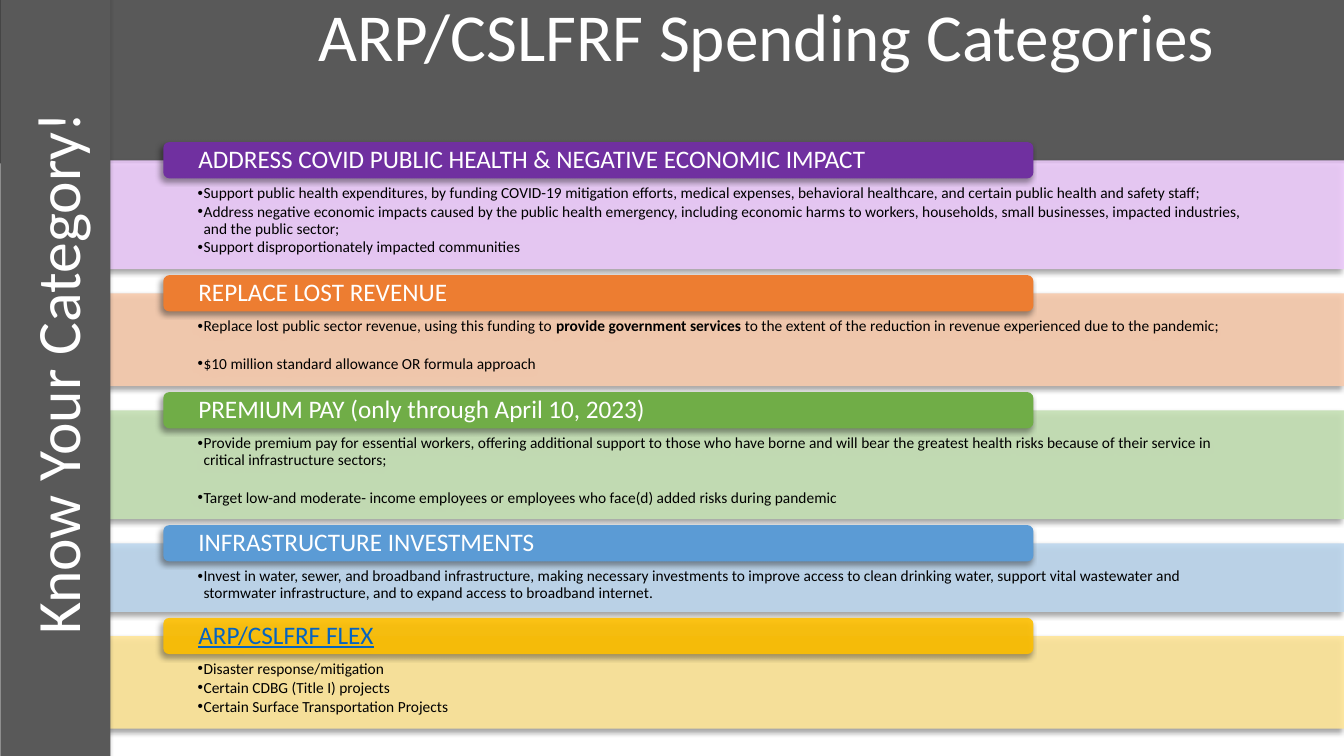
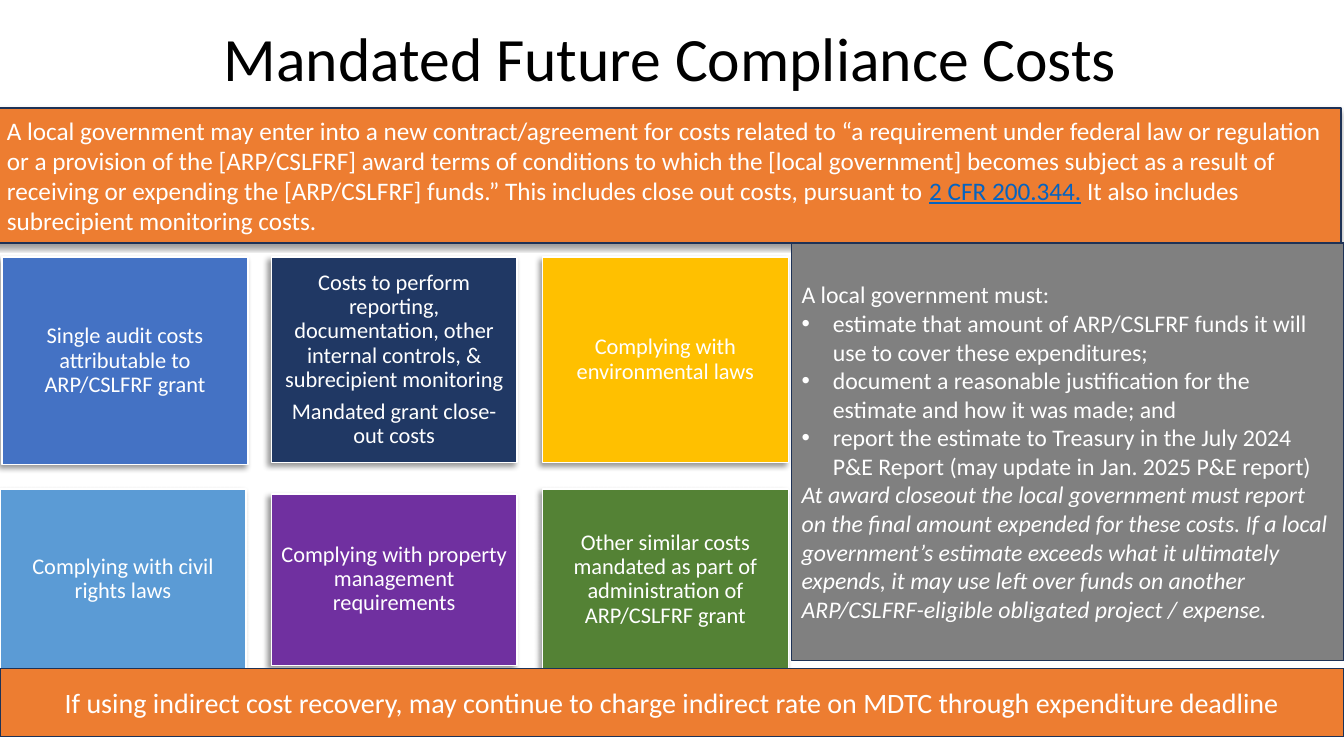
"""Builds two slides on spending categories and compliance costs."""
from dataclasses import dataclass

from lxml import etree
from pptx import Presentation
from pptx import util as u
from pptx.dml.color import RGBColor
from pptx.enum import shapes, text
from pptx.oxml.ns import qn

EMU_PER_PX = 9144
LEFT, CENTER = text.PP_ALIGN.LEFT, text.PP_ALIGN.CENTER
TOP, MIDDLE = text.MSO_ANCHOR.TOP, text.MSO_ANCHOR.MIDDLE


@dataclass(frozen=True)
class Theme:
    font: str = "Calibri"
    white: str = "FFFFFF"
    black: str = "000000"
    dark_gray: str = "595959"
    gray: str = "808080"
    navy: str = "203864"
    outline: str = "1E3256"
    link: str = "0563C1"
    purple: str = "7030A0"
    orange: str = "ED7D31"
    green: str = "70AD47"
    dark_green: str = "548235"
    light_blue: str = "5B9BD5"
    blue: str = "4472C4"
    gold: str = "FFC000"
    pale_purple: str = "ECCAFA"
    pale_orange: str = "F8CBAD"
    pale_green: str = "C5E0B4"
    pale_blue: str = "BDD7EE"
    pale_gold: str = "FFE699"
    display: float = 48
    title: float = 44
    footer: float = 20
    heading: float = 18
    panel: float = 17
    tile: float = 16
    detail: float = 11


THEME = Theme()


def px(length):
    return u.Emu(length * EMU_PER_PX)


class Deck:
    """Holds the theme and the current slide, and draws each kind of element."""

    def __init__(self, theme):
        self.theme = theme
        self.presentation = Presentation()
        self.presentation.slide_width = px(1333)
        self.presentation.slide_height = px(750)
        self.slide = None

    def add_slide(self, layout):
        self.slide = self.presentation.slides.add_slide(
            self.presentation.slide_layouts[layout])

    def placeholder(self, index, box):
        shape = self.slide.placeholders[index]
        shape.left, shape.top, shape.width, shape.height = map(px, box)
        shape.element.getparent().append(shape.element)
        return shape

    def title(self, words, box, size, color):
        self.put_text(self.placeholder(0, box), [words], size, color, CENTER, spacing=0.9)

    def style(self, shape, fill, line=None, alpha=None, shadow=False):
        shape.fill.solid()
        shape.fill.fore_color.rgb = RGBColor.from_string(fill)
        properties = shape.element.spPr
        if alpha:
            color = properties.find(".//" + qn("a:srgbClr"))
            etree.SubElement(color, qn("a:alpha"), val=str(alpha * 1000))
        if line:
            shape.line.color.rgb = RGBColor.from_string(line)
            shape.line.width = u.Pt(1)
        else:
            shape.line.fill.background()
        shape.shadow.inherit = False
        if shadow:
            outer = etree.SubElement(
                properties.find(qn("a:effectLst")), qn("a:outerShdw"),
                blurRad=str(u.Pt(4)), dist=str(u.Pt(3)), dir="8100000", rotWithShape="0")
            color = etree.SubElement(outer, qn("a:srgbClr"), val=self.theme.black)
            etree.SubElement(color, qn("a:alpha"), val="40000")

    def box(self, box, fill, rounded=False, **style):
        kind = shapes.MSO_SHAPE.ROUNDED_RECTANGLE if rounded else shapes.MSO_SHAPE.RECTANGLE
        shape = self.slide.shapes.add_shape(kind, *map(px, box))
        self.style(shape, fill, **style)
        return shape

    def put_text(self, shape, paragraphs, size, color, align=LEFT, anchor=MIDDLE,
                 insets=(10, 5, 10, 5), spacing=1, after=0, gap=0, bullet_indent=0,
                 bulleted=()):
        frame = shape.text_frame
        frame.word_wrap = True
        frame.auto_size = text.MSO_AUTO_SIZE.NONE
        frame.vertical_anchor = anchor
        (frame.margin_left, frame.margin_top,
         frame.margin_right, frame.margin_bottom) = map(px, insets)
        for number, content in enumerate(paragraphs):
            paragraph = frame.add_paragraph() if number else frame.paragraphs[0]
            paragraph.alignment = align
            paragraph.line_spacing = spacing
            paragraph.space_before = u.Pt(gap if number else 0)
            paragraph.space_after = u.Pt(after)
            self.bullet(paragraph, bullet_indent if number in bulleted else 0)
            paragraph.font.name = self.theme.font
            paragraph.font.size = u.Pt(size)
            paragraph.font.color.rgb = RGBColor.from_string(color)
            for part in [content] if isinstance(content, str) else content:
                self.run(paragraph, *([part] if isinstance(part, str) else part))

    def bullet(self, paragraph, indent):
        properties = paragraph._p.get_or_add_pPr()
        properties.set("marL", str(px(indent)))
        properties.set("indent", str(px(-indent)))
        if indent:
            etree.SubElement(properties, qn("a:buFont"), typeface="Arial")
            etree.SubElement(properties, qn("a:buChar"), char="•")
        else:
            etree.SubElement(properties, qn("a:buNone"))

    def run(self, paragraph, words, emphasis=None):
        run = paragraph.add_run()
        run.text = words
        if emphasis == "bold":
            run.font.bold = True
        elif emphasis == "italic":
            run.font.italic = True
        elif emphasis == "link":
            run.font.underline = True
            run.font.color.rgb = RGBColor.from_string(self.theme.link)

    def category(self, top, height, heading, details, color, pale, gap=0, alpha=None):
        theme = self.theme
        band = self.box((100, top, 1233, height), pale, alpha=90, shadow=True)
        self.put_text(band, details, theme.detail, theme.black, anchor=TOP,
                      insets=(96, 25, 96, 9), spacing=0.9, after=1.5, gap=gap,
                      bullet_indent=6, bulleted=range(len(details)))
        chip = self.box((162, top - 18, 863, 36), color, rounded=True,
                        alpha=alpha, shadow=True)
        self.put_text(chip, [heading], theme.heading, theme.white,
                      insets=(33, 0, 33, 0), spacing=0.9)

    def tile(self, box, color, paragraphs):
        shape = self.box(box, color, line=self.theme.white, shadow=True)
        self.put_text(shape, paragraphs, self.theme.tile, self.theme.white, CENTER,
                      insets=(7, 7, 7, 7), spacing=0.9, after=5.6)

    def side_title(self, words, box):
        shape = self.box(box, self.theme.dark_gray, shadow=True)
        shape.rotation = 270
        self.put_text(shape, [words], self.theme.title, self.theme.white, CENTER)

    def banner(self, box, content, size, align=LEFT, shadow=False):
        shape = self.box(box, self.theme.orange, line=self.theme.outline, shadow=shadow)
        self.put_text(shape, [content], size, self.theme.white, align)

    def list_panel(self, box, paragraphs, bulleted):
        shape = self.placeholder(1, box)
        self.style(shape, self.theme.gray, line=self.theme.outline)
        self.put_text(shape, paragraphs, self.theme.panel, self.theme.white,
                      bullet_indent=31, bulleted=bulleted)


CATEGORIES = [
    (108, "ADDRESS COVID PUBLIC HEALTH & NEGATIVE ECONOMIC IMPACT", [
        "Support public health expenditures, by funding COVID-19 mitigation efforts, medical "
        "expenses, behavioral healthcare, and certain public health and safety staff;",
        "Address negative economic impacts caused by the public health emergency, including "
        "economic harms to workers, households, small businesses, impacted industries, and "
        "the public sector;",
        "Support disproportionately impacted communities",
    ], THEME.purple, THEME.pale_purple),
    (92, "REPLACE LOST REVENUE", [
        ["Replace lost public sector revenue, using this funding to ",
         ("provide government services ", "bold"),
         "to the extent of the reduction in revenue experienced due to the pandemic;"],
        "$10 million standard allowance OR formula approach",
    ], THEME.orange, THEME.pale_orange, 13.5),
    (108, "PREMIUM PAY (only through April 10, 2023)", [
        "Provide premium pay for essential workers, offering additional support to those who "
        "have borne and will bear the greatest health risks because of their service in "
        "critical infrastructure sectors;",
        "Target low-and moderate- income employees or employees who face(d) added risks "
        "during pandemic",
    ], THEME.green, THEME.pale_green, 13.5),
    (68, "INFRASTRUCTURE INVESTMENTS", [
        "Invest in water, sewer, and broadband infrastructure, making necessary investments "
        "to improve access to clean drinking water, support vital wastewater and stormwater "
        "infrastructure, and to expand access to broadband internet.",
    ], THEME.light_blue, THEME.pale_blue),
    (92, [("ARP/CSLFRF FLEX", "link")], [
        "Disaster response/mitigation",
        "Certain CDBG (Title I) projects",
        "Certain Surface Transportation Projects",
    ], THEME.gold, THEME.pale_gold, 0, 90),
]

TILES = [
    ((2, 255, 244, 206), THEME.blue, ["Single audit costs attributable to ARP/CSLFRF grant"]),
    ((269, 255, 244, 204), THEME.navy, [
        "Costs to perform reporting, documentation, other internal controls, & "
        "subrecipient monitoring",
        "Mandated grant close-out costs"]),
    ((538, 255, 244, 204), THEME.gold, ["Complying with environmental laws"]),
    ((0, 485, 244, 180), THEME.light_blue, ["Complying with civil rights laws"]),
    ((269, 490, 244, 170), THEME.purple, ["Complying with property management requirements"]),
    ((538, 485, 244, 180), THEME.dark_green, [
        "Other similar costs mandated as part of administration of ARP/CSLFRF grant"]),
]

CONTRACT_RULE = [
    "A local government may enter into a new contract/agreement for costs related to “a "
    "requirement under federal law or regulation or a provision of the [ARP/CSLFRF] award "
    "terms of conditions to which the [local government] becomes subject as a result of "
    "receiving or expending the [ARP/CSLFRF] funds.” This includes close out costs, "
    "pursuant to ",
    ("2 CFR 200.344.", "link"),
    " It also includes subrecipient monitoring costs.",
]

DUTIES = [
    "A local government must:",
    "estimate that amount of ARP/CSLFRF funds it will use to cover these expenditures;",
    "document a reasonable justification for the estimate and how it was made; and",
    "report the estimate to Treasury in the July 2024 P&E Report (may update in Jan. 2025 "
    "P&E report)",
    [("At award closeout the local government must report on the final amount expended for "
      "these costs. If a local government’s estimate exceeds what it ultimately expends, it "
      "may use left over funds on another ARP/CSLFRF-eligible obligated project / expense.",
      "italic")],
]


def build_categories(deck):
    deck.add_slide(5)
    deck.box((0, -10, 1333, 172), THEME.dark_gray)
    deck.title("ARP/CSLFRF Spending Categories", (164, -23, 1193, 124),
               THEME.display, THEME.white)
    top = 159
    for height, *category in CATEGORIES:
        deck.category(top, height, *category)
        top += height + 24
    deck.side_title("Know Your Category!", (-325, 316, 760, 109))


def build_compliance(deck):
    deck.add_slide(1)
    deck.title("Mandated Future Compliance Costs", (-3, -11, 1336, 145),
               THEME.title, THEME.black)
    for tile in TILES:
        deck.tile(*tile)
    deck.banner((-3, 107, 1333, 134), CONTRACT_RULE, THEME.heading, shadow=True)
    deck.banner((0, 663, 1333, 68),
                "If using indirect cost recovery, may continue to charge indirect rate on "
                "MDTC through expenditure deadline", THEME.footer, CENTER)
    deck.list_panel((785, 241, 548, 414), DUTIES, bulleted=(1, 2, 3))


def main():
    deck = Deck(THEME)
    build_categories(deck)
    build_compliance(deck)
    deck.presentation.save("out.pptx")


if __name__ == "__main__":
    main()
